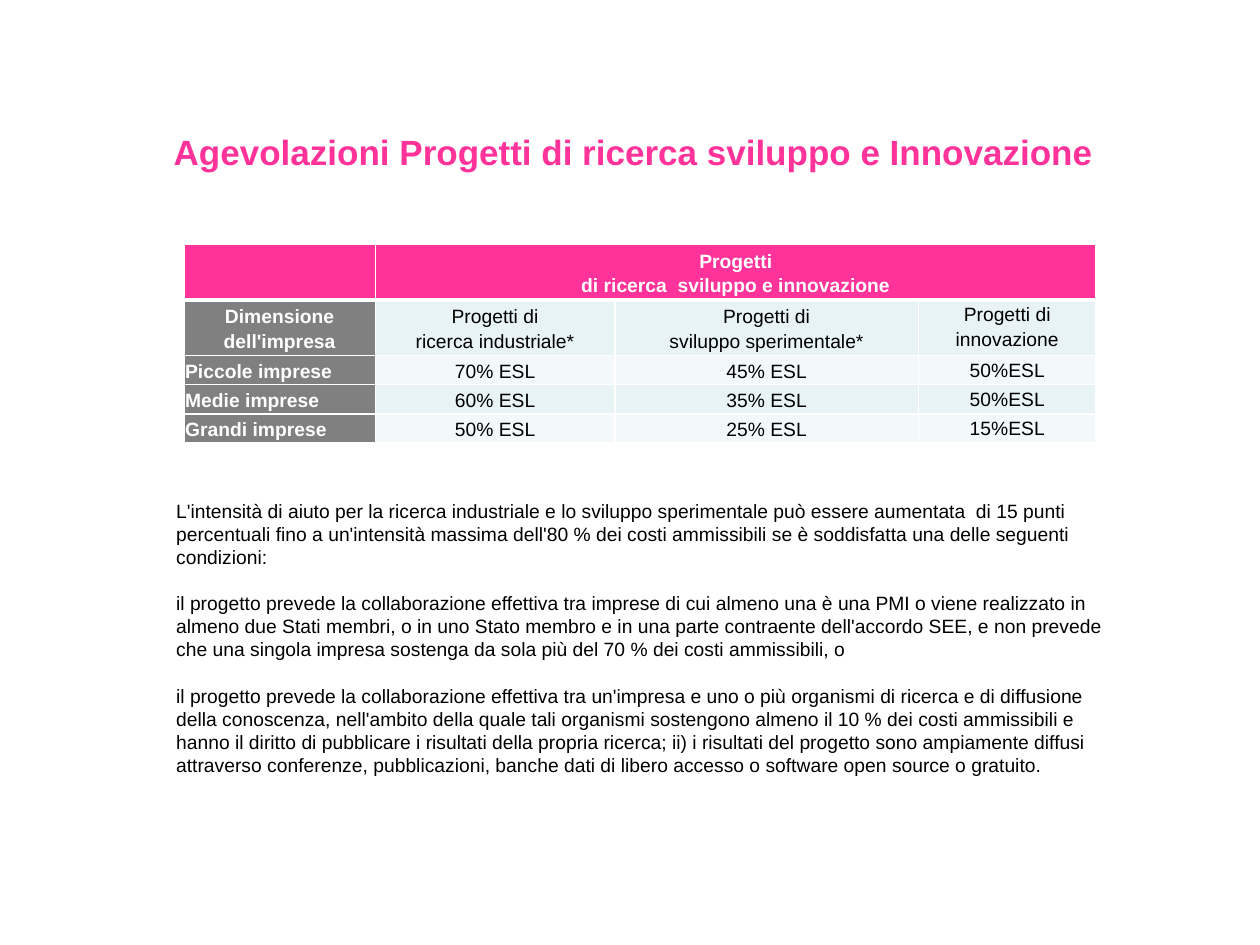
from lxml import etree
from pptx import Presentation
from pptx.dml.color import RGBColor
from pptx.enum.text import MSO_ANCHOR as Anchor, PP_ALIGN as Align
from pptx.oxml.ns import qn
from pptx.util import Inches, Pt

PINK = RGBColor(0xFF, 0x33, 0x99)
GRAY = RGBColor(0x80, 0x80, 0x80)
WHITE = RGBColor(0xFF, 0xFF, 0xFF)
BLACK = RGBColor(0, 0, 0)
BAND_DARK = RGBColor(0xE7, 0xF3, 0xF4)
BAND_LIGHT = RGBColor(0xF3, 0xF9, 0xFA)

TITLE = "Agevolazioni Progetti di ricerca sviluppo e Innovazione"
HEADER = "Progetti\vdi ricerca  sviluppo e innovazione"
COLUMN_WIDTHS = [1.52, 1.9, 2.41, 1.41]
ROW_HEIGHTS = [0.41, 0.41, 0.22, 0.22, 0.22]
ROWS = [
    ["", HEADER, "", ""],
    ["Dimensione\vdell'impresa", "Progetti di\vricerca industriale*",
     "Progetti di\vsviluppo sperimentale*", "Progetti di innovazione"],
    ["Piccole imprese", "70% ESL", "45% ESL", "50%ESL"],
    ["Medie imprese", "60% ESL", "35% ESL", "50%ESL"],
    ["Grandi imprese", "50% ESL", "25% ESL", "15%ESL"],
]
CONDITIONS = [
    "L'intensità di aiuto per la ricerca industriale e lo sviluppo "
    "sperimentale può essere aumentata  di 15 punti percentuali fino a "
    "un'intensità massima dell'80 % dei costi ammissibili se è soddisfatta "
    "una delle seguenti condizioni:",
    "il progetto prevede la collaborazione effettiva tra imprese di cui "
    "almeno una è una PMI o viene realizzato in almeno due Stati membri, o in "
    "uno Stato membro e in una parte contraente dell'accordo SEE, e non "
    "prevede che una singola impresa sostenga da sola più del 70 % dei costi "
    "ammissibili, o",
    "il progetto prevede la collaborazione effettiva tra un'impresa e uno o "
    "più organismi di ricerca e di diffusione della conoscenza, nell'ambito "
    "della quale tali organismi sostengono almeno il 10 % dei costi "
    "ammissibili e hanno il diritto di pubblicare i risultati della propria "
    "ricerca; ii) i risultati del progetto sono ampiamente diffusi attraverso "
    "conferenze, pubblicazioni, banche dati di libero accesso o software open "
    "source o gratuito.",
]


class SlideBuilder:
    font_name = "Arial"
    text_size = 11

    def __init__(self, page):
        self.page = page

    def style(self, para, size, color, bold=False):
        for font in [para.font] + [span.font for span in para.runs]:
            font.name = self.font_name
            font.size = Pt(size)
            font.bold = bold
            font.color.rgb = color

    def text(self, left, top, width, height, texts, size, color,
             bold=False, gap=0):
        box = self.page.shapes.add_textbox(
            Inches(left), Inches(top), Inches(width), Inches(height))
        frame = box.text_frame
        frame.word_wrap = True
        frame.text = "\n".join(texts)
        for index, para in enumerate(frame.paragraphs):
            if index:
                para.space_before = Pt(gap)
            self.style(para, size, color, bold)

    def borders(self, cell, bottom):
        props = cell._tc.get_or_add_tcPr()
        widths = {"a:lnL": 1, "a:lnR": 1, "a:lnT": 1, "a:lnB": bottom}
        for index, (tag, width) in enumerate(widths.items()):
            line = etree.Element(qn(tag), w=str(Pt(width)))
            fill = etree.SubElement(line, qn("a:solidFill"))
            etree.SubElement(fill, qn("a:srgbClr"), val=str(WHITE))
            props.insert(index, line)

    def cell(self, cell, text, fill, color, bold, align, anchor, bottom):
        cell.fill.solid()
        cell.fill.fore_color.rgb = fill
        cell.margin_left = cell.margin_right = Inches(0.01)
        cell.margin_top = cell.margin_bottom = Inches(0.01)
        cell.vertical_anchor = anchor
        cell.text_frame.text = text
        para = cell.text_frame.paragraphs[0]
        para.alignment = align
        para.line_spacing = 1.15
        self.style(para, self.text_size, color, bold)
        self.borders(cell, bottom)

    def table(self, left, top, column_widths, row_heights, rows):
        table = self.page.shapes.add_table(
            len(rows), len(column_widths), Inches(left), Inches(top),
            Inches(sum(column_widths)), Inches(sum(row_heights))).table
        for column, width in zip(table.columns, column_widths):
            column.width = Inches(width)
        for row, height in zip(table.rows, row_heights):
            row.height = Inches(height)
        for r, texts in enumerate(rows):
            band = BAND_DARK if r % 2 else BAND_LIGHT
            for c, text in enumerate(texts):
                heading = r == 0 or c == 0
                fill = PINK if r == 0 else GRAY if c == 0 else band
                self.cell(
                    table.cell(r, c), text, fill,
                    WHITE if heading else BLACK, heading,
                    Align.LEFT if c == 0 and r > 1 else Align.CENTER,
                    Anchor.TOP if c == 3 and r > 0 else Anchor.MIDDLE,
                    3 if r == 0 else 1)
        table.cell(0, 1).merge(table.cell(0, len(column_widths) - 1))


def main():
    deck = Presentation()
    deck.slide_width, deck.slide_height = Inches(10), Inches(7.5)
    builder = SlideBuilder(deck.slides.add_slide(deck.slide_layouts[6]))

    # Title
    builder.text(1.28, 0.99, 7.58, 0.71, [TITLE], 20, PINK, bold=True)

    # Aid intensity by company size
    builder.table(1.46, 1.94, COLUMN_WIDTHS, ROW_HEIGHTS, ROWS)

    # Conditions for a higher intensity
    builder.text(1.3, 3.91, 7.56, 2.32, CONDITIONS, builder.text_size, BLACK,
                 gap=13.2)

    deck.save("out.pptx")


if __name__ == "__main__":
    main()
